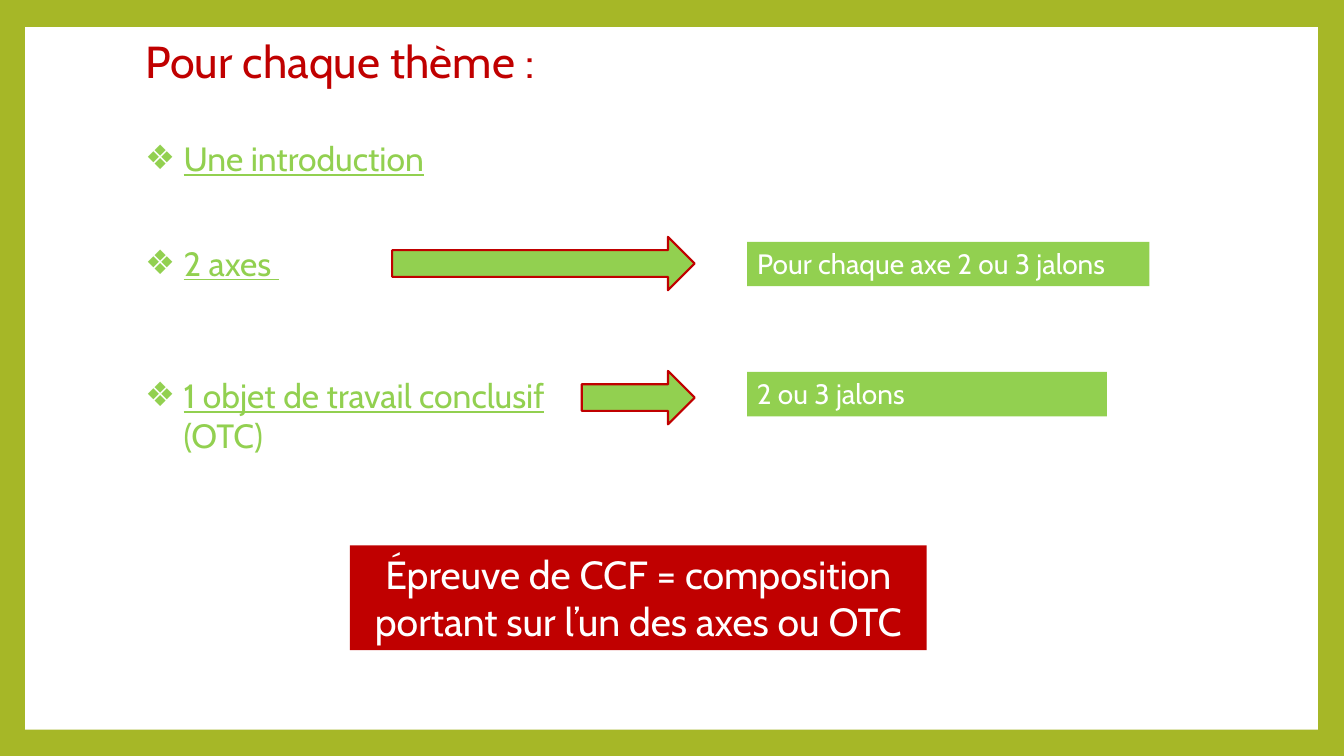
from dataclasses import dataclass

from lxml import etree
from pptx import Presentation
from pptx import util as u
from pptx.dml.color import RGBColor
from pptx.enum import shapes, text
from pptx.oxml import ns


@dataclass(frozen=True)
class Theme:
    font: str = "Cabin"
    olive: str = "A6B727"
    green: str = "92D050"
    red: str = "C00000"
    white: str = "FFFFFF"
    title: int = 32
    callout: int = 28
    topic: int = 24
    detail: int = 20
    outline: float = 1.5


THEME = Theme()


def place(shape, box):
    shape.left, shape.top, shape.width, shape.height = map(u.Inches, box)


def paint(fill, color):
    fill.solid()
    fill.fore_color.rgb = RGBColor.from_string(color)


def prepare_text(shape, anchor):
    frame = shape.text_frame
    frame.word_wrap = True
    frame.auto_size = text.MSO_AUTO_SIZE.NONE
    frame.vertical_anchor = anchor
    return frame


def add_run(paragraph, words, size, color, underline=None):
    run = paragraph.add_run()
    run.text = words
    run.font.name = THEME.font
    run.font.size = u.Pt(size)
    run.font.underline = underline
    run.font.color.rgb = RGBColor.from_string(color)


def add_block(slide, box, color, preset=shapes.MSO_SHAPE.RECTANGLE):
    shape = slide.shapes.add_shape(preset, *map(u.Inches, box))
    shape.shadow.inherit = False
    paint(shape.fill, color)
    shape.line.fill.background()
    return shape


def add_label(slide, box, lines, size, color, alignment):
    frame = prepare_text(add_block(slide, box, color), text.MSO_ANCHOR.TOP)
    for index, line in enumerate(lines):
        paragraph = frame.add_paragraph() if index else frame.paragraphs[0]
        paragraph.alignment = alignment
        add_run(paragraph, line, size, THEME.white)


def add_arrow(slide, box):
    arrow = add_block(slide, box, THEME.green, shapes.MSO_SHAPE.RIGHT_ARROW)
    paint(arrow.line.fill, THEME.red)
    arrow.line.width = u.Pt(THEME.outline)


def fill_title(slide, box):
    title = slide.shapes.title
    place(title, box)
    paragraph = prepare_text(title, text.MSO_ANCHOR.TOP).paragraphs[0]
    paragraph.alignment = text.PP_ALIGN.LEFT
    add_run(paragraph, "Pour chaque thème :", THEME.title, THEME.red)


def add_bullet(paragraph, indent):
    properties = paragraph._p.get_or_add_pPr()
    properties.set("marL", str(u.Inches(indent)))
    properties.set("indent", str(u.Inches(-indent)))
    etree.SubElement(properties, ns.qn("a:buChar")).set("char", "❖")


def fill_topics(slide, box):
    topics = [
        (0, [("Une introduction", True)]),
        (45.7, [("2 axes ", True)]),
        (65.8, [("1 objet de travail conclusif ", True), ("(OTC)", False)]),
    ]
    body = slide.placeholders[1]
    place(body, box)
    frame = prepare_text(body, text.MSO_ANCHOR.TOP)
    for index, (gap, runs) in enumerate(topics):
        paragraph = frame.add_paragraph() if index else frame.paragraphs[0]
        paragraph.space_before = u.Pt(gap)
        add_bullet(paragraph, 0.38)
        for words, underline in runs:
            add_run(paragraph, words, THEME.topic, THEME.green, underline)


def add_milestones(slide, box):
    left, top, width, height = box
    rows = [
        (0, 0.05, 3, width, "Pour chaque axe 2 ou 3 jalons"),
        (1.33, 1.34, 1.12, 3.57, "2 ou 3 jalons"),
    ]
    tip, label_left = left + 3, left + 3.52
    for arrow_drop, label_drop, length, label_width, words in rows:
        add_arrow(slide, (tip - length, top + arrow_drop, length, height))
        add_label(slide, (label_left, top + label_drop, label_width, 0.44),
                  [words], THEME.detail, THEME.green, text.PP_ALIGN.LEFT)


def build_theme_slide(presentation):
    slide = presentation.slides.add_slide(presentation.slide_layouts[1])
    paint(slide.background.fill, THEME.olive)
    panel = add_block(slide, (0.25, 0.27, 12.82, 6.97), THEME.white)
    slide.shapes.title._element.addprevious(panel._element)
    fill_title(slide, (1.34, 0.28, 5.5, 0.64))
    fill_topics(slide, (1.34, 1.32, 4.21, 3.27))
    add_milestones(slide, (3.89, 2.35, 3.99, 0.53))
    add_label(slide, (3.47, 5.41, 5.72, 1.04),
              ["Épreuve de CCF = composition", "portant sur l’un des axes ou OTC"],
              THEME.callout, THEME.red, text.PP_ALIGN.CENTER)


def main():
    presentation = Presentation()
    presentation.slide_width = u.Inches(13.33)
    presentation.slide_height = u.Inches(7.5)
    build_theme_slide(presentation)
    presentation.save("out.pptx")


if __name__ == "__main__":
    main()
